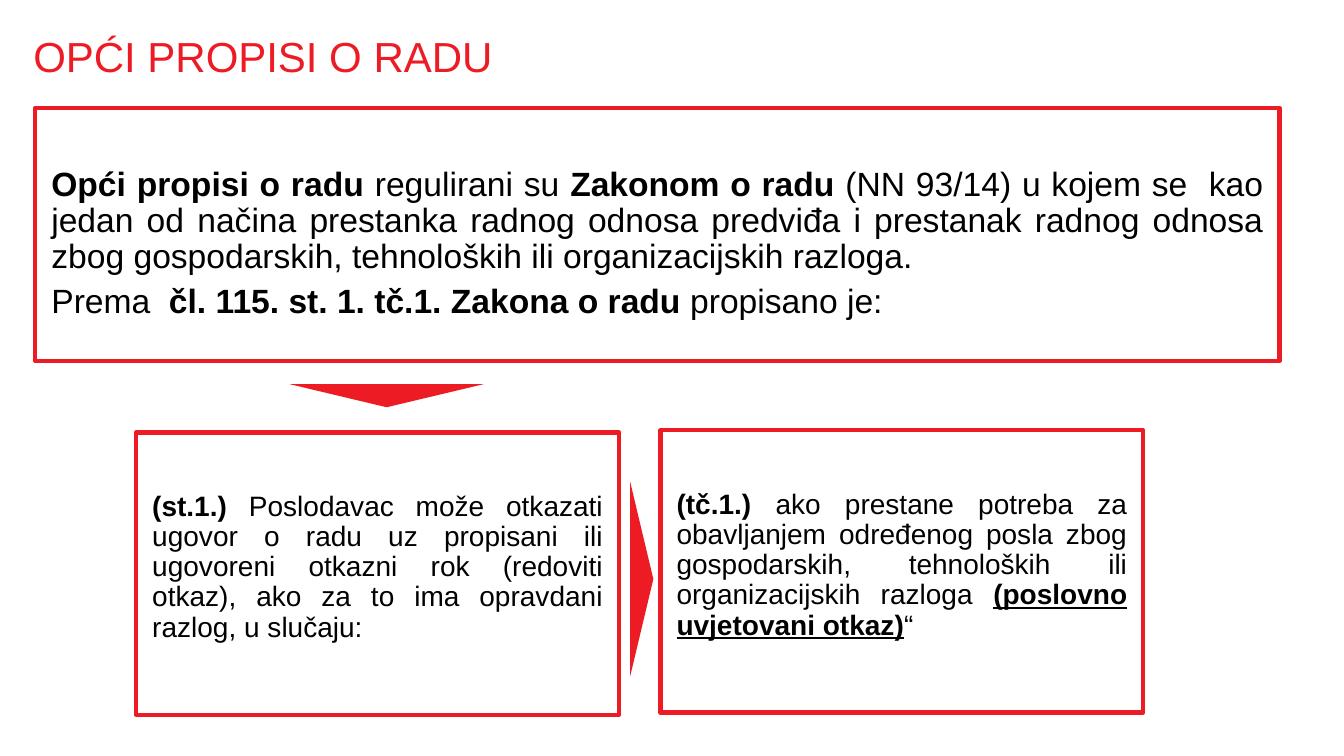
"""Builds the slide on the general labour regulations."""
from pptx import Presentation
from pptx.dml.color import RGBColor
from pptx.enum.shapes import MSO_SHAPE
from pptx.enum.text import MSO_ANCHOR, PP_ALIGN
from pptx.util import Inches, Pt

RED = RGBColor(0xED, 0x1C, 0x24)
WHITE = RGBColor(0xFF, 0xFF, 0xFF)
BLACK = RGBColor(0x00, 0x00, 0x00)
FONT = "Arial"
PLAIN, BOLD, UNDERLINED = "plain", "bold", "underlined"

REGULATIONS = [
    [("Opći propisi o radu ", BOLD),
     ("regulirani su ", PLAIN),
     ("Zakonom o radu", BOLD),
     (" (NN 93/14) u kojem se  kao jedan od načina prestanka radnog odnosa "
      "predviđa i prestanak radnog odnosa zbog gospodarskih, tehnoloških ili "
      "organizacijskih razloga.", PLAIN)],
    [("Prema", PLAIN),
     ("  čl. 115. st. 1. tč.1. Zakona o radu ", BOLD),
     ("propisano je:", PLAIN)],
]
EMPLOYER_NOTICE = [
    [("(st.1.) ", BOLD),
     ("Poslodavac može otkazati ugovor o radu uz propisani ili ugovoreni "
      "otkazni rok (redoviti otkaz), ako za to ima opravdani razlog, "
      "u slučaju:", PLAIN)],
]
BUSINESS_REASON = [
    [("(tč.1.) ", BOLD),
     ("ako prestane potreba za obavljanjem određenog posla zbog gospodarskih, "
      "tehnoloških ili organizacijskih razloga ", PLAIN),
     ("(poslovno uvjetovani otkaz)", UNDERLINED),
     ("“", PLAIN)],
]


def add_run(paragraph, text, size, color, style=PLAIN):
    """Append one styled run to a paragraph."""
    run = paragraph.add_run()
    run.text = text
    run.font.name = FONT
    run.font.size = Pt(size)
    run.font.color.rgb = color
    run.font.bold = style != PLAIN
    run.font.underline = style == UNDERLINED


def set_insets(frame, left, top, right, bottom):
    """Set the inner margins of a text frame in inches."""
    frame.margin_left, frame.margin_top = Inches(left), Inches(top)
    frame.margin_right, frame.margin_bottom = Inches(right), Inches(bottom)


def add_title(slide, text):
    """Add the red heading."""
    heading = slide.shapes.add_textbox(
        Inches(0.33), Inches(0.36), Inches(9.29), Inches(0.45))
    frame = heading.text_frame
    frame.word_wrap = True
    set_insets(frame, 0, 0, 0, 0)
    frame.paragraphs[0].line_spacing = 0.9
    add_run(frame.paragraphs[0], text, 30, RED)


def add_provision(slide, left, top, width, height, size, provisions):
    """Add a red-framed box with justified paragraphs."""
    box = slide.shapes.add_shape(
        MSO_SHAPE.RECTANGLE,
        Inches(left), Inches(top), Inches(width), Inches(height))
    box.shadow.inherit = False
    box.fill.solid()
    box.fill.fore_color.rgb = WHITE
    box.line.color.rgb = RED
    box.line.width = Pt(3)
    frame = box.text_frame
    frame.word_wrap = True
    frame.vertical_anchor = MSO_ANCHOR.TOP
    set_insets(frame, 0.16, 0.59, 0.16, 0.05)
    for index, provision in enumerate(provisions):
        paragraph = frame.add_paragraph() if index else frame.paragraphs[0]
        paragraph.alignment = PP_ALIGN.JUSTIFY
        paragraph.line_spacing = 0.9
        paragraph.space_before = Pt(size / 4)
        for text, style in provision:
            add_run(paragraph, text, size, BLACK, style)


def add_pointer(slide, left, top, rotation):
    """Add a flat red triangle that leads to the next box."""
    pointer = slide.shapes.add_shape(
        MSO_SHAPE.ISOSCELES_TRIANGLE,
        Inches(left), Inches(top), Inches(1.93), Inches(0.23))
    pointer.rotation = rotation
    pointer.shadow.inherit = False
    pointer.fill.solid()
    pointer.fill.fore_color.rgb = RED
    pointer.line.fill.background()


def main():
    """Build and save the slide."""
    presentation = Presentation()
    presentation.slide_width = Inches(13.33)
    presentation.slide_height = Inches(7.5)
    slide = presentation.slides.add_slide(presentation.slide_layouts[6])
    add_provision(slide, 0.35, 1.07, 12.34, 2.51, 24, REGULATIONS)
    add_provision(slide, 1.35, 4.29, 4.79, 2.8, 20, EMPLOYER_NOTICE)
    add_provision(slide, 6.55, 4.27, 4.79, 2.8, 20, BUSINESS_REASON)
    add_title(slide, "OPĆI PROPISI O RADU")
    add_pointer(slide, 5.4, 5.63, 90)
    add_pointer(slide, 2.87, 3.81, 180)
    presentation.save("out.pptx")


if __name__ == "__main__":
    main()
